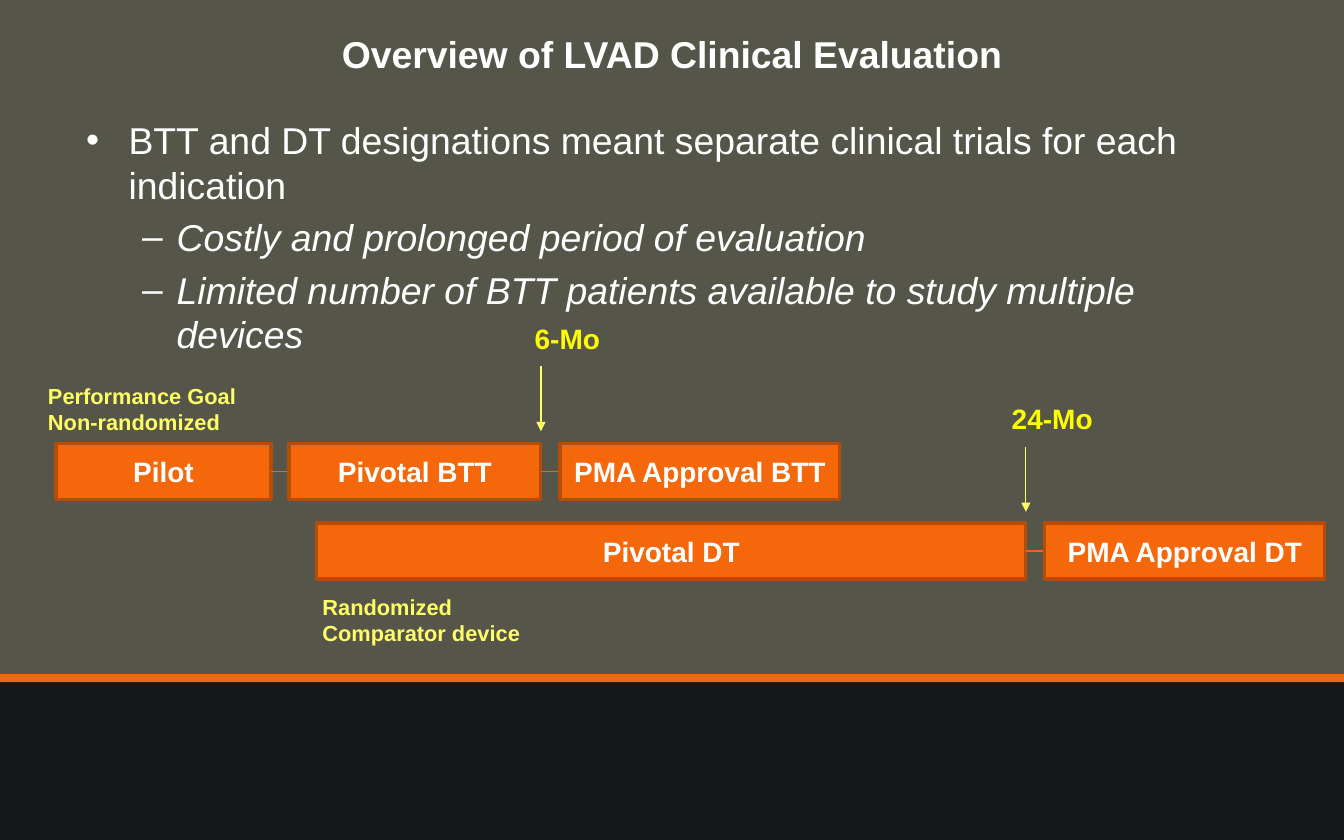
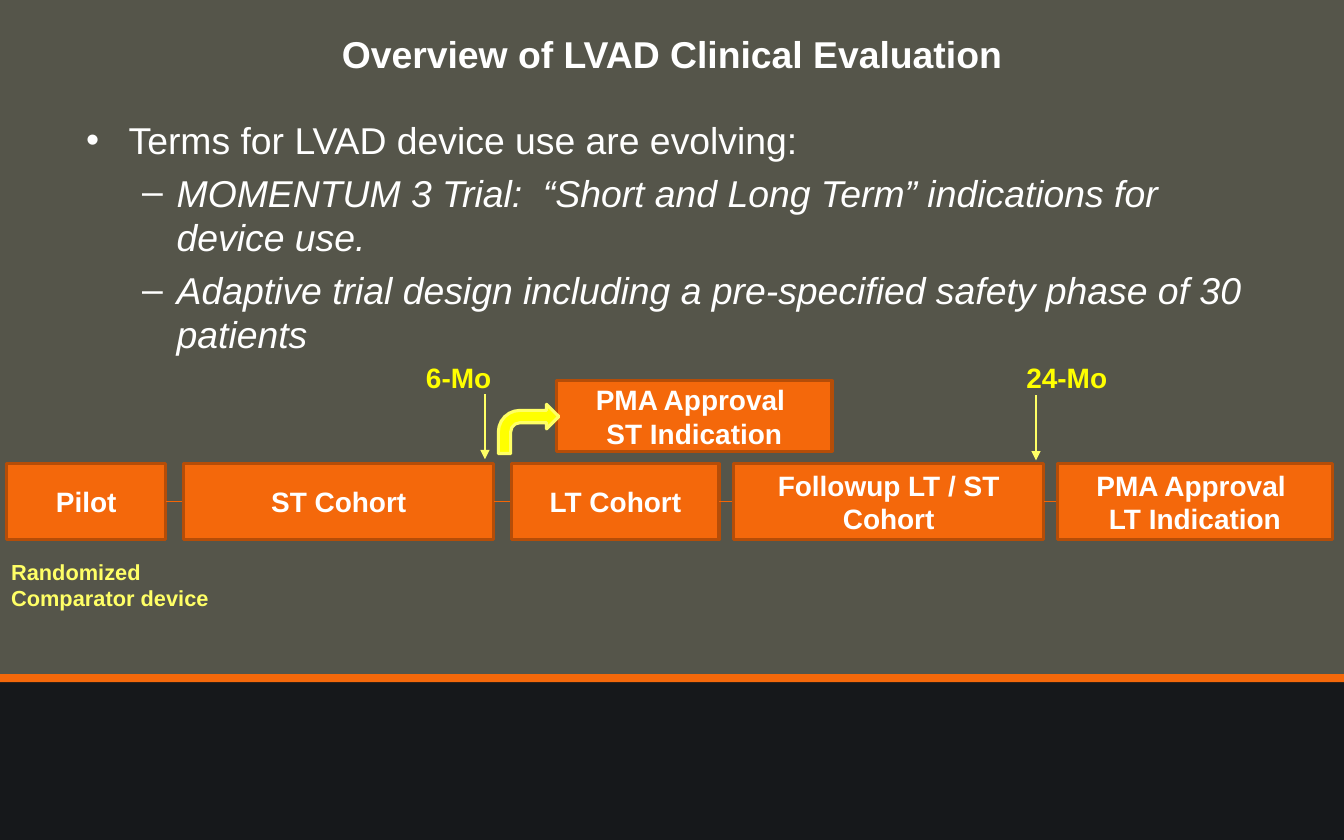
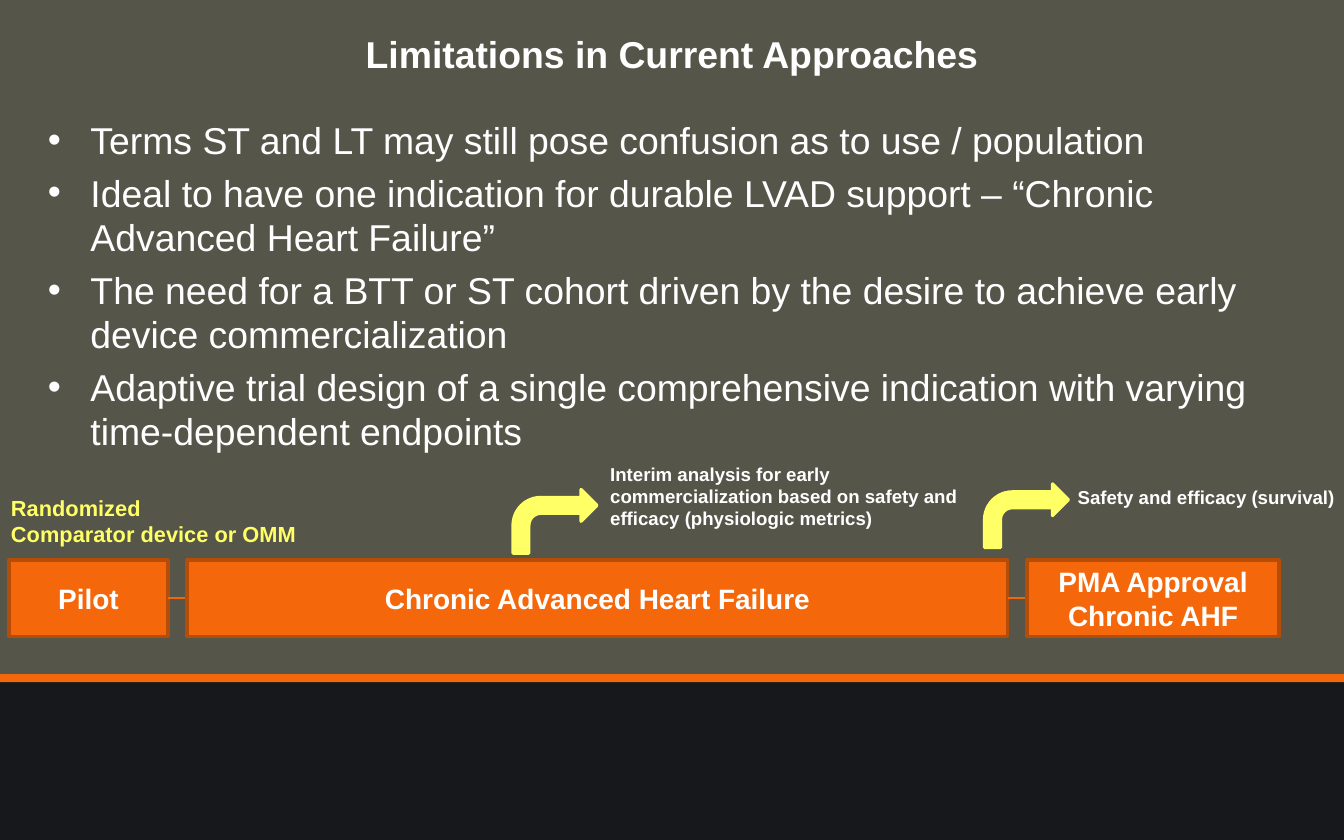
from collections import namedtuple

from lxml.etree import SubElement
from pptx import Presentation
from pptx.dml.color import RGBColor
from pptx.enum.shapes import MSO_CONNECTOR as Connector, MSO_SHAPE as Shape
from pptx.enum.text import MSO_ANCHOR as Anchor, MSO_AUTO_SIZE as AutoSize, PP_ALIGN as Align
from pptx.oxml.ns import qn
from pptx.util import Inches, Pt

# Slide grid: 12 columns by 7.5 rows of square cells
COLUMNS, ROWS = 12, 7.5
CELL = Inches(1)
FONT = "Arial"
OLIVE, INK, WHITE = "55554A", "131519", "FFFFFF"
ORANGE, RUST, LINK = "F4680B", "B54D08", "F46505"
YELLOW, LEMON = "FFFF00", "FFFF66"

Box = namedtuple("Box", "left top width height")
Bullet = namedtuple("Bullet", "mark indent hang italic")
LEVELS = [Bullet("•", 0.38, 0.38, False), Bullet("–", 0.81, 0.31, True)]


def color(hex_code):
    return RGBColor.from_string(hex_code)


def cells(*counts):
    return [round(count * CELL) for count in counts]


def write(frame, text, size, hex_code, bold=True, align=Align.LEFT):
    frame.text = text
    for paragraph in frame.paragraphs:
        paragraph.alignment = align
        for run in paragraph.runs:
            font = run.font
            font.name, font.size, font.bold = FONT, Pt(size), bold
            font.color.rgb = color(hex_code)


def add_text(slide, box, text, size, hex_code, wrap=False, grow=True, **style):
    frame = slide.shapes.add_textbox(*cells(*box)).text_frame
    frame.word_wrap = wrap
    frame.auto_size = AutoSize.SHAPE_TO_FIT_TEXT if grow else AutoSize.NONE
    write(frame, text, size, hex_code, **style)
    return frame


def add_block(slide, kind, box, fill, outline=None):
    block = slide.shapes.add_shape(kind, *cells(*box))
    block.shadow.inherit = False
    block.fill.solid()
    block.fill.fore_color.rgb = color(fill)
    if outline:
        block.line.color.rgb = color(outline)
        block.line.width = Pt(2)
    else:
        block.line.fill.background()
    return block


def add_line(slide, start, end, hex_code, arrow=False):
    line = slide.shapes.add_connector(Connector.STRAIGHT, *cells(*start, *end))
    line.line.color.rgb = color(hex_code)
    line.line.width = Pt(0.75)
    if arrow:
        SubElement(line.line._get_or_add_ln(), qn("a:tailEnd"), type="triangle")
    SubElement(line._element.spPr, qn("a:effectLst"))


def add_frame(deck, title):
    """Blank slide with background, footer bands and title."""
    slide = deck.slides.add_slide(deck.slide_layouts[6])
    slide.background.fill.solid()
    slide.background.fill.fore_color.rgb = color(OLIVE)
    footer = add_block(slide, Shape.RECTANGLE, Box(0, 6.08, COLUMNS, ROWS - 6.08), INK)
    tint = footer._element.spPr.find(".//" + qn("a:srgbClr"))
    SubElement(tint, qn("a:alpha"), val="94000")
    add_block(slide, Shape.RECTANGLE, Box(0, 6.02, COLUMNS, 0.07), ORANGE)
    heading = add_text(slide, Box(0.6, 0, COLUMNS - 1.2, 0.95), title, 24, WHITE,
                       wrap=True, grow=False, align=Align.CENTER)
    heading.vertical_anchor = Anchor.MIDDLE
    return slide


def add_bullets(slide, box, points):
    """Body text; points are (level, text)."""
    body = add_text(slide, box, "\n".join(text for _, text in points), 24, WHITE,
                    wrap=True, grow=False, bold=False)
    for index, (paragraph, (level, _)) in enumerate(zip(body.paragraphs, points)):
        bullet = LEVELS[level]
        paragraph.level = level
        if index:
            paragraph.space_before = Pt(4.8)
        properties = paragraph._p.get_or_add_pPr()
        properties.set("marL", str(Inches(bullet.indent)))
        properties.set("indent", str(-Inches(bullet.hang)))
        SubElement(properties, qn("a:buFont"), typeface=FONT)
        SubElement(properties, qn("a:buChar"), char=bullet.mark)
        for run in paragraph.runs:
            run.font.italic = bullet.italic


def add_stage(slide, box, label):
    stage = add_block(slide, Shape.RECTANGLE, box, ORANGE, RUST)
    stage.text_frame.word_wrap = True
    stage.text_frame.vertical_anchor = Anchor.MIDDLE
    write(stage.text_frame, label, 18, WHITE, align=Align.CENTER)


def add_track(slide, left, top, height, stages):
    """Linked stages; each is (label, width, gap after it)."""
    middle = top + height / 2
    for index, (label, width, gap) in enumerate(stages):
        add_stage(slide, Box(left, top, width, height), label)
        end = left + width
        left = end + gap
        if index < len(stages) - 1:
            add_line(slide, (end, middle), (left, middle), LINK)


def add_milestone(slide, box, label, x, top):
    """Time label with an arrow that drops to the track."""
    add_text(slide, box, label, 18, YELLOW, align=Align.CENTER)
    add_line(slide, (x, top), (x, top + 0.58), LEMON, arrow=True)


def add_note(slide, left, top, width, text):
    add_text(slide, Box(left, top, width, 0.57), text, 14, LEMON)


def separate_trials(deck):
    slide = add_frame(deck, "Overview of LVAD Clinical Evaluation")
    add_bullets(slide, Box(0.67, 1, 10.63, 5), [
        (0, "BTT and DT designations meant separate clinical trials for each indication"),
        (1, "Costly and prolonged period of evaluation"),
        (1, "Limited number of BTT patients available to study multiple devices"),
    ])
    # One track for each indication
    add_track(slide, 0.5, 3.96, 0.5, [
        ("Pilot", 1.92, 0.16), ("Pivotal BTT", 2.25, 0.17), ("PMA Approval BTT", 2.5, 0)])
    add_track(slide, 2.83, 4.67, 0.5, [
        ("Pivotal DT", 6.33, 0.17), ("PMA Approval DT", 2.5, 0)])
    add_milestone(slide, Box(4.67, 2.82, 0.79, 0.4), "6-Mo", 4.83, 3.27)
    add_milestone(slide, Box(8.93, 3.54, 0.93, 0.4), "24-Mo", 9.16, 3.99)
    add_note(slide, 0.33, 3.37, 1.89, "Performance Goal\nNon-randomized")
    add_note(slide, 2.78, 5.25, 1.98, "Randomized\nComparator device")


def evolving_terms(deck):
    slide = add_frame(deck, "Overview of LVAD Clinical Evaluation")
    add_bullets(slide, Box(0.67, 1, 10.63, 5), [
        (0, "Terms for LVAD device use are evolving:"),
        (1, "MOMENTUM 3 Trial:  “Short and Long Term” indications for device use."),
        (1, "Adaptive trial design including a pre-specified safety phase of 30 patients"),
    ])
    # Single track with an early approval branch
    add_track(slide, 0.06, 4.14, 0.68, [
        ("Pilot", 1.42, 0.16), ("ST Cohort", 2.77, 0.16), ("LT Cohort", 1.85, 0.13),
        ("Followup LT / ST Cohort", 2.77, 0.12), ("PMA Approval \nLT Indication", 2.46, 0)])
    add_stage(slide, Box(4.97, 3.4, 2.46, 0.63), "PMA Approval \nST Indication")
    add_milestone(slide, Box(3.7, 3.17, 0.79, 0.4), "6-Mo", 4.33, 3.52)
    add_milestone(slide, Box(9.06, 3.17, 0.93, 0.4), "24-Mo", 9.25, 3.53)
    add_note(slide, 0, 4.94, 1.98, "Randomized\nComparator device")
    add_block(slide, Shape.BENT_ARROW, Box(4.45, 3.61, 0.54, 0.44), YELLOW, LEMON)


def limitations(deck):
    slide = add_frame(deck, "Limitations in Current Approaches")
    add_bullets(slide, Box(0.33, 1, 11.33, 5), [
        (0, "Terms ST and LT may still pose confusion as to use / population"),
        (0, "Ideal to have one indication for durable LVAD support – “Chronic Advanced "
            "Heart Failure”"),
        (0, "The need for a BTT or ST cohort driven by the desire to achieve early device "
            "commercialization"),
        (0, "Adaptive trial design of a single comprehensive indication with varying "
            "time-dependent endpoints"),
    ])
    add_track(slide, 0.08, 5, 0.68, [
        ("Pilot", 1.42, 0.17), ("Chronic Advanced Heart Failure", 7.33, 0.17),
        ("PMA Approval Chronic AHF", 2.25, 0)])
    add_note(slide, 0, 4.37, 2.76, "Randomized\nComparator device or OMM")
    # Endpoints that branch off the track
    for left, top in [(4.58, 4.37), (8.79, 4.32)]:
        add_block(slide, Shape.BENT_ARROW, Box(left, top, 0.75, 0.57), LEMON, LEMON)
    add_text(slide, Box(5.35, 4.08, 3.4, 0.71),
             "Interim analysis for early commercialization based on safety and efficacy "
             "(physiologic metrics)", 12, WHITE, wrap=True)
    add_text(slide, Box(9.51, 4.29, 2.52, 0.3), "Safety and efficacy (survival)", 12, WHITE,
             align=Align.CENTER)


def main():
    deck = Presentation()
    deck.slide_width, deck.slide_height = cells(COLUMNS, ROWS)
    for build in (separate_trials, evolving_terms, limitations):
        build(deck)
    deck.save("out.pptx")


if __name__ == "__main__":
    main()
